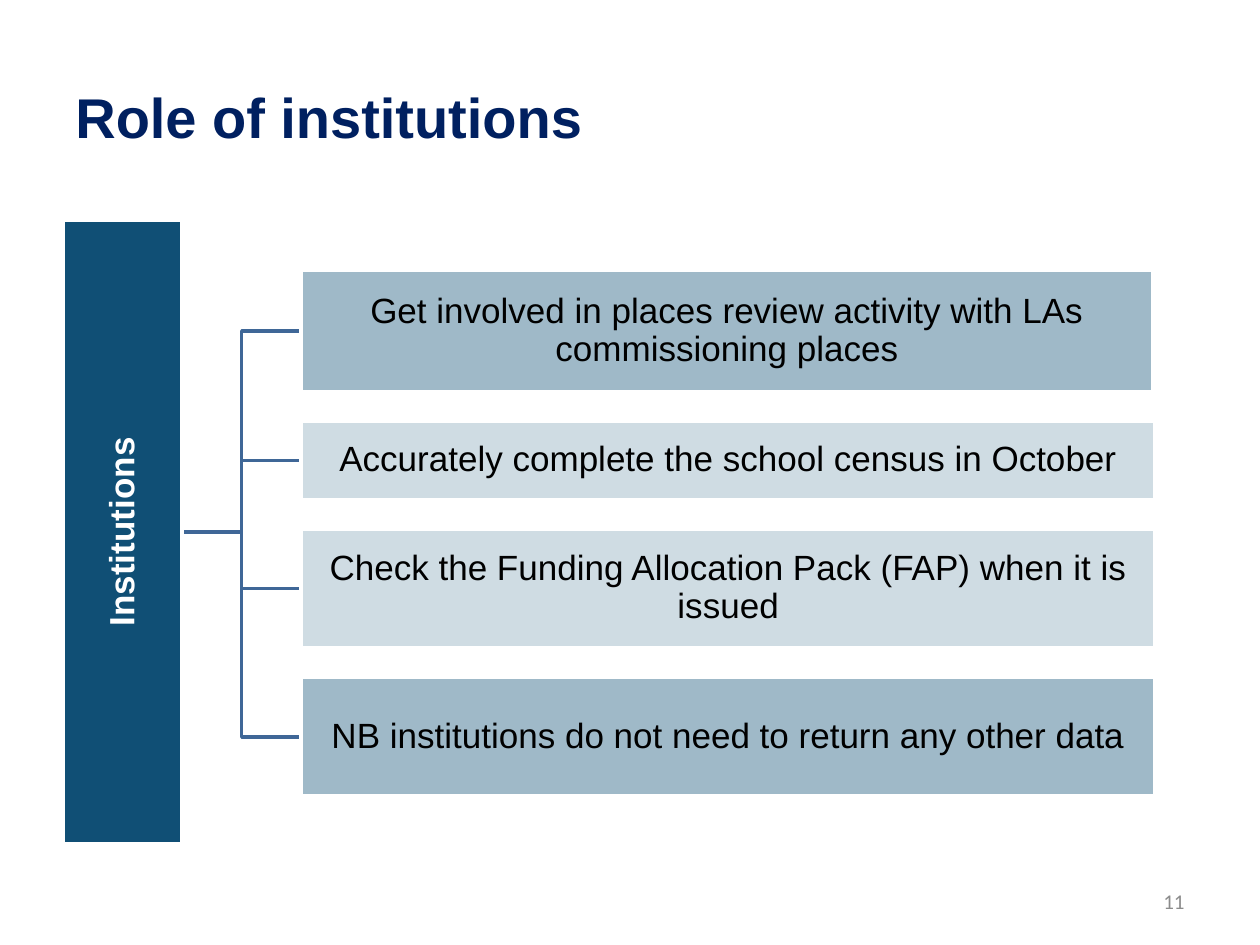
from pptx import Presentation
from pptx.dml.color import RGBColor
from pptx.enum import shapes, text
from pptx.util import Cm, Pt

NAVY = RGBColor(0x00, 0x20, 0x60)
TEAL = RGBColor(0x10, 0x4F, 0x75)
MID_BLUE = RGBColor(0x9F, 0xB9, 0xC8)
PALE_BLUE = RGBColor(0xCF, 0xDC, 0xE3)
LINK_BLUE = RGBColor(0x3F, 0x67, 0x97)
GREY = RGBColor(0x8C, 0x8C, 0x8C)
WHITE = RGBColor(0xFF, 0xFF, 0xFF)
BLACK = RGBColor(0x00, 0x00, 0x00)

TITLE = "Role of institutions"
ROOT = "Institutions"
PAGE_NUMBER = "11"
DUTIES = [
    ("Get involved in places review activity with LAs commissioning places", 17.17, 2.46, MID_BLUE),
    ("Accurately complete the school census in October", 17.22, 1.57, PALE_BLUE),
    ("Check the Funding Allocation Pack (FAP) when it is issued", 17.22, 2.39, PALE_BLUE),
    ("NB institutions do not need to return any other data", 17.22, 2.39, MID_BLUE),
]

DUTY_LEFT, DUTY_TOP, DUTY_GAP = 6.07, 5.44, 0.6
ROOT_X, ROOT_Y, ROOT_LENGTH, ROOT_THICKNESS = 2.48, 10.72, 12.57, 2.39
INSET = 0.03


def write(holder, wording, size, colour, align, font="Arial", bold=False):
    frame = holder.text_frame
    frame.word_wrap = True
    frame.vertical_anchor = text.MSO_ANCHOR.MIDDLE
    paragraph = frame.paragraphs[0]
    paragraph.alignment = align
    run = paragraph.add_run()
    run.text = wording
    run.font.name = font
    run.font.size = Pt(size)
    run.font.bold = bold
    run.font.color.rgb = colour
    return paragraph


def add_box(slide, wording, left, top, width, height, fill, colour, bold=False):
    box = slide.shapes.add_shape(
        shapes.MSO_SHAPE.RECTANGLE, Cm(left), Cm(top), Cm(width), Cm(height))
    box.shadow.inherit = False
    box.fill.solid()
    box.fill.fore_color.rgb = fill
    box.line.color.rgb = WHITE
    box.line.width = Pt(2)
    frame = box.text_frame
    frame.margin_left = frame.margin_right = Cm(INSET)
    frame.margin_top = frame.margin_bottom = Cm(INSET)
    paragraph = write(box, wording, 20, colour, text.PP_ALIGN.CENTER, bold=bold)
    paragraph.line_spacing = 0.9
    return box


def add_branch(slide, target_y):
    start_x = ROOT_X + ROOT_THICKNESS / 2
    bend_x = (start_x + DUTY_LEFT) / 2
    builder = slide.shapes.build_freeform(Cm(start_x), Cm(ROOT_Y))
    corners = [(bend_x, ROOT_Y), (bend_x, target_y), (DUTY_LEFT, target_y)]
    builder.add_line_segments([(Cm(x), Cm(y)) for x, y in corners], close=False)
    branch = builder.convert_to_shape()
    branch.shadow.inherit = False
    branch.fill.background()
    branch.line.color.rgb = LINK_BLUE
    branch.line.width = Pt(2)


def main():
    deck = Presentation()
    deck.slide_width, deck.slide_height = Cm(25.4), Cm(19.05)
    slide = deck.slides.add_slide(deck.slide_layouts[6])

    title = slide.shapes.add_textbox(Cm(1.27), Cm(0.76), Cm(22.86), Cm(3.18))
    write(title, TITLE, 32, NAVY, text.PP_ALIGN.LEFT, bold=True)

    tops = []
    top = DUTY_TOP
    for _, _, height, _ in DUTIES:
        tops.append(top)
        add_branch(slide, top + height / 2)
        top += height + DUTY_GAP

    root = add_box(slide, ROOT, ROOT_X - ROOT_LENGTH / 2, ROOT_Y - ROOT_THICKNESS / 2,
                   ROOT_LENGTH, ROOT_THICKNESS, TEAL, WHITE, bold=True)
    root.rotation = 270

    for (wording, width, height, fill), top in zip(DUTIES, tops):
        add_box(slide, wording, DUTY_LEFT, top, width, height, fill, BLACK)

    page = slide.shapes.add_textbox(Cm(18.2), Cm(17.65), Cm(5.93), Cm(1.02))
    write(page, PAGE_NUMBER, 12, GREY, text.PP_ALIGN.RIGHT, font="Calibri")

    deck.save("out.pptx")


if __name__ == "__main__":
    main()
